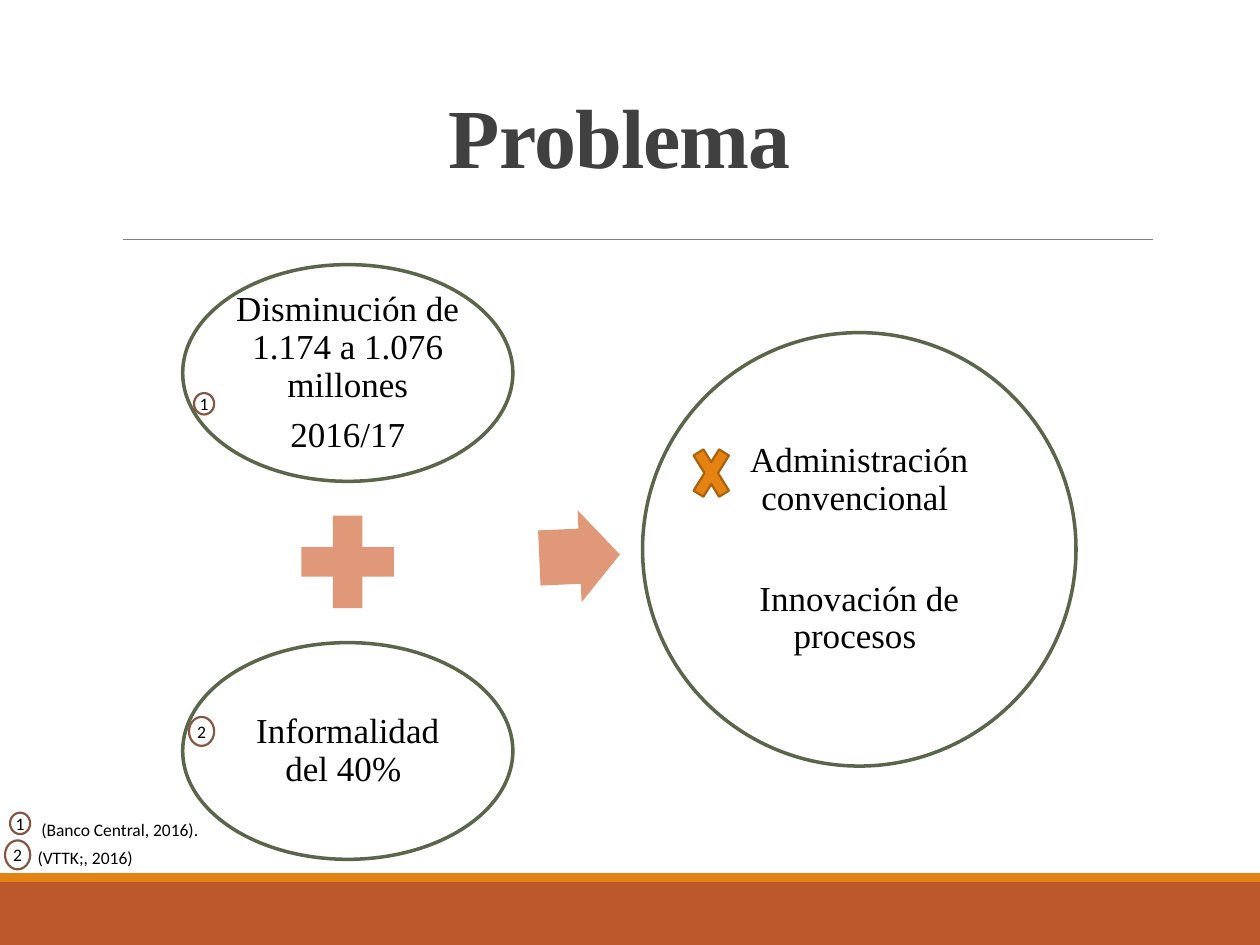
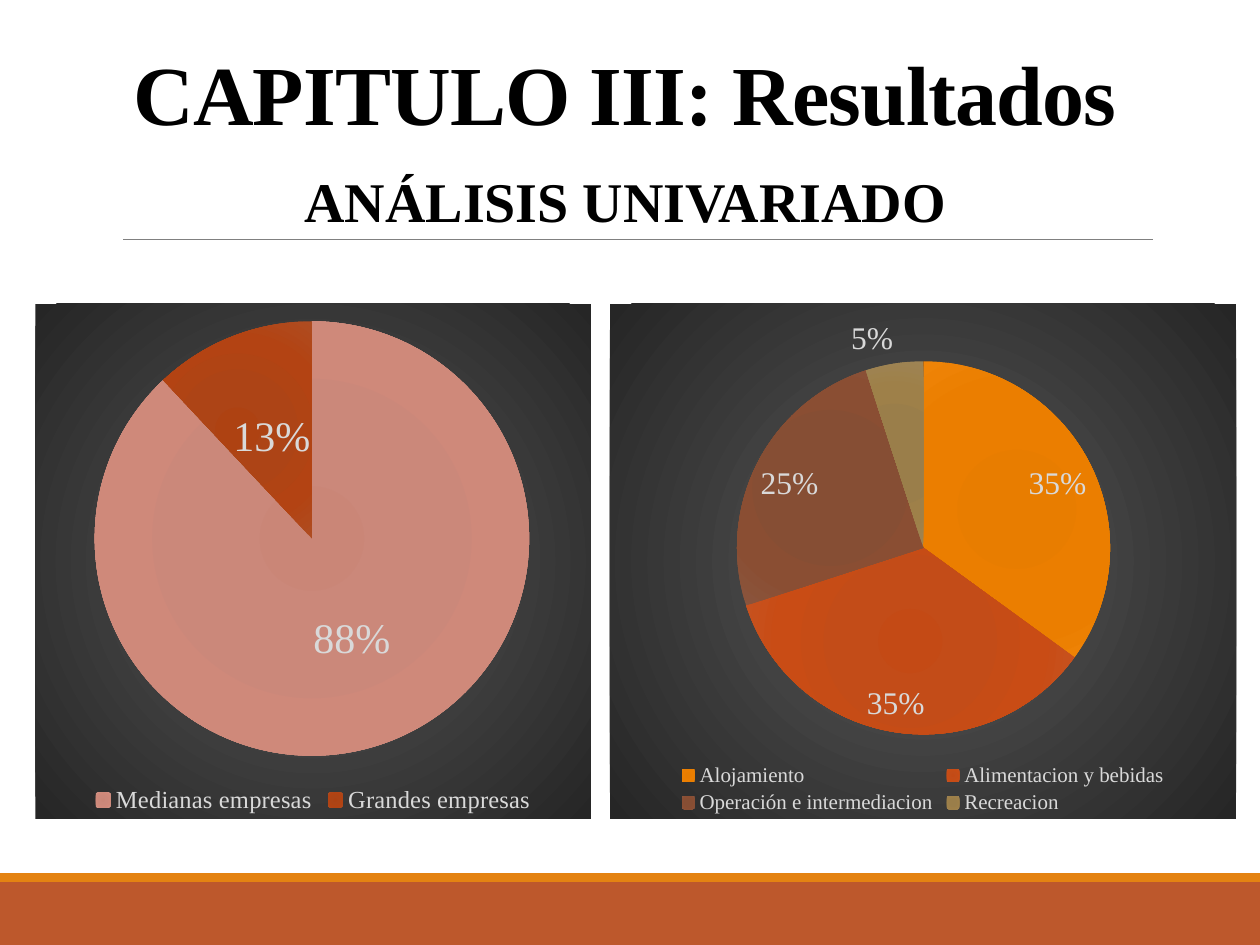
"""Builds two slides: the problem diagram and the univariate results charts."""
import pptx
import pptx.chart.data
import pptx.dml.color
import pptx.enum.chart
import pptx.enum.shapes
import pptx.enum.text
import pptx.oxml
import pptx.oxml.ns
import pptx.util
from pptx.util import Inches

SHAPE = pptx.enum.shapes.MSO_SHAPE
ANCHOR = pptx.enum.text.MSO_ANCHOR
ALIGN = pptx.enum.text.PP_ALIGN
LABEL = pptx.enum.chart.XL_LABEL_POSITION
SERIF, SANS = "Times New Roman", "Calibri"

COLORS = {
    "white": "FFFFFF", "black": "000000", "title": "404040", "rule": "808080",
    "band": "BD582C", "orange": "E48312", "cross_line": "A9610D",
    "olive": "5A664A", "salmon": "E09878", "brown": "865640", "label": "D9D9D9",
}
PANEL_STOPS = [(0, "595959"), (100, "262626")]
STOP_PLACES = (0, 34, 70, 100)

BUBBLES = [
    (1.45, 2.1, 2.62, 1.72, ["Disminución de 1.174 a 1.076 millones", "2016/17"], 7),
    (1.45, 5.1, 2.62, 1.72, ["Informalidad del 40% "], 7),
    (5.1, 2.64, 3.44, 3.44, ["Administración convencional ", "Innovación de procesos "], 36),
]
SYMBOLS = [
    (SHAPE.MATH_PLUS, (2.26, 3.96, 1, 1), "salmon", None, 0),
    (SHAPE.RIGHT_ARROW, (4.28, 4.05, 0.64, 0.73), "salmon", None, -2.5),
    (SHAPE.MATH_MULTIPLY, (5.45, 3.44, 0.39, 0.63), "orange", "cross_line", 0),
]
MARKER_SIZES = {"1": (0.16, 0.17), "2": (0.2, 0.23)}
MARKERS = [("1", 0.08, 6.45), ("2", 0.04, 6.67), ("2", 1.5, 5.69), ("1", 1.54, 3.12)]
SOURCES = [("(Banco Central, 2016).", 0.23, 6.45, 1.5), ("(VTTK;, 2016)", 0.2, 6.67, 1.01)]

PIES = [
    {
        "frame": (0.28, 2.41, 4.41, 4.09), "circle": (0.75, 2.55, 3.45),
        "legend_size": 14, "label_size": 24, "position": LABEL.CENTER,
        "label_texts": {1: "13%"},
        "slices": [
            ("Medianas empresas", 88, ("CA8677", "CB887A", "CF897A", "D29487")),
            ("Grandes empresas", 12, ("AE4212", "AD4416", "B34313", "AE4C21")),
        ],
    },
    {
        "frame": (4.84, 2.41, 4.97, 4.09), "circle": (5.85, 2.87, 2.96),
        "legend_size": 12, "label_size": 18, "position": LABEL.BEST_FIT,
        "label_texts": {},
        "slices": [
            ("Alojamiento", 35, ("E57B00", "E87D00", "EB7E00", "EF8407")),
            ("Alimentacion y bebidas", 35, ("C44A15", "C34C18", "C94C15", "C45525")),
            ("Operación e intermediacion", 25, ("874C32", "864E34", "8A4E33", "8A553D")),
            ("Recreacion", 5, ("9A7D48", "9A7E4A", "9E8049", "9E8454")),
        ],
    },
]


def rgb(name):
    return pptx.dml.color.RGBColor.from_string(COLORS[name])


def set_font(font, size, color="black", face=SERIF, bold=False):
    font.size, font.name, font.bold = pptx.util.Pt(size), face, bold
    font.color.rgb = rgb(color)


def write(box, texts, size, color="black", face=SERIF, bold=False, align=ALIGN.CENTER,
          anchor=ANCHOR.MIDDLE, line_spacing=None, after=0, tracking=None,
          insets=(0.1, 0.05), wrap=True):
    frame = box.text_frame
    frame.word_wrap, frame.vertical_anchor = wrap, anchor
    frame.margin_left = frame.margin_right = Inches(insets[0])
    frame.margin_top = frame.margin_bottom = Inches(insets[1])
    for index, text in enumerate(texts):
        para = frame.add_paragraph() if index else frame.paragraphs[0]
        para.alignment, para.line_spacing = align, line_spacing
        para.space_after = pptx.util.Pt(after)
        span = para.add_run()
        span.text = text
        set_font(span.font, size, color, face, bold)
        if tracking is not None:
            span.font._element.set("spc", str(int(tracking * 100)))


def add_figure(page, kind, place, fill, line=None, width=1.25):
    figure = page.shapes.add_shape(kind, *map(Inches, place))
    figure.shadow.inherit = False
    figure.fill.solid()
    figure.fill.fore_color.rgb = rgb(fill)
    if line:
        figure.line.color.rgb = rgb(line)
        figure.line.width = pptx.util.Pt(width)
    else:
        figure.line.fill.background()
    return figure


def add_text(page, place, text, size, **style):
    write(page.shapes.add_textbox(*map(Inches, place)), [text], size, **style)


def add_title(page, place, text, color):
    add_text(page, place, text, 48, color=color, bold=True, anchor=ANCHOR.BOTTOM,
             line_spacing=0.85, tracking=-0.5)


def add_page(deck):
    page = deck.slides.add_slide(deck.slide_layouts[6])
    add_figure(page, SHAPE.RECTANGLE, (0, 7, 10, 0.5), "band")
    add_figure(page, SHAPE.RECTANGLE, (0, 6.93, 10, 0.07), "orange")
    rule = page.shapes.add_connector(pptx.enum.shapes.MSO_CONNECTOR.STRAIGHT,
                                     *map(Inches, (0.98, 1.9, 9.15, 1.9)))
    rule.line.color.rgb = rgb("rule")
    rule.line.width = pptx.util.Pt(0.5)
    rule._element.spPr.append(pptx.oxml.parse_xml(
        f"<a:effectLst {pptx.oxml.ns.nsdecls('a')}/>"))
    return page


def radial_properties(stops, focus):
    colors = "".join(f'<a:gs pos="{place * 1000}"><a:srgbClr val="{color}"/></a:gs>'
                     for place, color in stops)
    sides = " ".join(f'{side}="{focus * 1000}"' for side in "ltrb")
    return pptx.oxml.parse_xml(
        f"<c:spPr {pptx.oxml.ns.nsdecls('c', 'a')}><a:gradFill><a:gsLst>{colors}</a:gsLst>"
        f'<a:path path="circle"><a:fillToRect {sides}/></a:path></a:gradFill>'
        "<a:ln><a:noFill/></a:ln></c:spPr>")


def place_circle(chart, frame, circle):
    left, top, width, height = frame
    x, y, diameter = circle
    parts = {"x": (x - left) / width, "y": (y - top) / height,
             "w": diameter / width, "h": diameter / height}
    modes = '<c:layoutTarget val="inner"/><c:xMode val="edge"/><c:yMode val="edge"/>'
    values = "".join(f'<c:{key} val="{value:.3f}"/>' for key, value in parts.items())
    layout = pptx.oxml.parse_xml(
        f"<c:layout {pptx.oxml.ns.nsdecls('c')}><c:manualLayout>{modes}{values}"
        "</c:manualLayout></c:layout>")
    area = chart.element.find(".//" + pptx.oxml.ns.qn("c:plotArea"))
    for old in area.findall(pptx.oxml.ns.qn("c:layout")):
        area.remove(old)
    area.insert(0, layout)


def add_pie(page, pie):
    names, values, palettes = zip(*pie["slices"])
    data = pptx.chart.data.CategoryChartData()
    data.categories = names
    data.add_series("Series 1", values)
    chart = page.shapes.add_chart(pptx.enum.chart.XL_CHART_TYPE.PIE,
                                  *map(Inches, pie["frame"]), data).chart
    chart.has_title = False
    set_font(chart.font, 10, face=SANS)
    chart.has_legend = True
    chart.legend.position = pptx.enum.chart.XL_LEGEND_POSITION.BOTTOM
    chart.legend.include_in_layout = False
    set_font(chart.legend.font, pie["legend_size"], "label")

    plot = chart.plots[0]
    plot.vary_by_categories = True
    series = plot.series[0]
    for index, palette in enumerate(palettes):
        series.points[index].format.fill.solid()
        stops = zip(STOP_PLACES, palette)
        point = series._element.findall(pptx.oxml.ns.qn("c:dPt"))[index]
        point.replace(point.find(pptx.oxml.ns.qn("c:spPr")), radial_properties(stops, 100))

    labels = series.data_labels
    labels.show_percentage, labels.show_value = True, False
    labels.number_format, labels.number_format_is_linked = "0%", False
    labels.position = pie["position"]
    set_font(labels.font, pie["label_size"], "label")
    for index, text in pie["label_texts"].items():
        label = series.points[index].data_label
        span = label.text_frame.paragraphs[0].add_run()
        span.text = text
        set_font(span.font, pie["label_size"], "label")
        label.position = pie["position"]

    place_circle(chart, pie["frame"], pie["circle"])
    chart.element.find(pptx.oxml.ns.qn("c:chart")).addnext(radial_properties(PANEL_STOPS, 50))


def build_problem(deck):
    page = add_page(deck)
    add_title(page, (0.5, 0.6, 9, 0.92), "Problema ", "title")
    for *place, texts, after in BUBBLES:
        bubble = add_figure(page, SHAPE.OVAL, place, "white", "olive", 2)
        write(bubble, texts, 20, line_spacing=0.9, after=after, insets=(0.03, 0.03))
    for kind, place, fill, line, rotation in SYMBOLS:
        symbol = add_figure(page, kind, place, fill, line)
        symbol.rotation = rotation
        if kind == SHAPE.RIGHT_ARROW:
            symbol.adjustments[0] = 0.6
    for text, left, top, width in SOURCES:
        add_text(page, (left, top, width, 0.27), text, 10, face=SANS,
                 align=ALIGN.LEFT, anchor=ANCHOR.TOP, wrap=False)
    for number, left, top in MARKERS:
        marker = add_figure(page, SHAPE.OVAL, (left, top, *MARKER_SIZES[number]),
                            "white", "brown")
        write(marker, [number], 10, face=SANS, insets=(0, 0), wrap=False)


def build_results(deck):
    page = add_page(deck)
    add_text(page, (0.08, 1.27, 9.77, 0.64), "ANÁLISIS UNIVARIADO", 32, bold=True,
             anchor=ANCHOR.TOP)
    add_title(page, (0.51, 0.21, 8.9, 0.97), "CAPITULO III: Resultados", "black")
    for pie in PIES:
        add_pie(page, pie)


def main():
    deck = pptx.Presentation()
    deck.slide_width, deck.slide_height = Inches(10), Inches(7.5)
    build_problem(deck)
    build_results(deck)
    deck.save("out.pptx")


if __name__ == "__main__":
    main()
